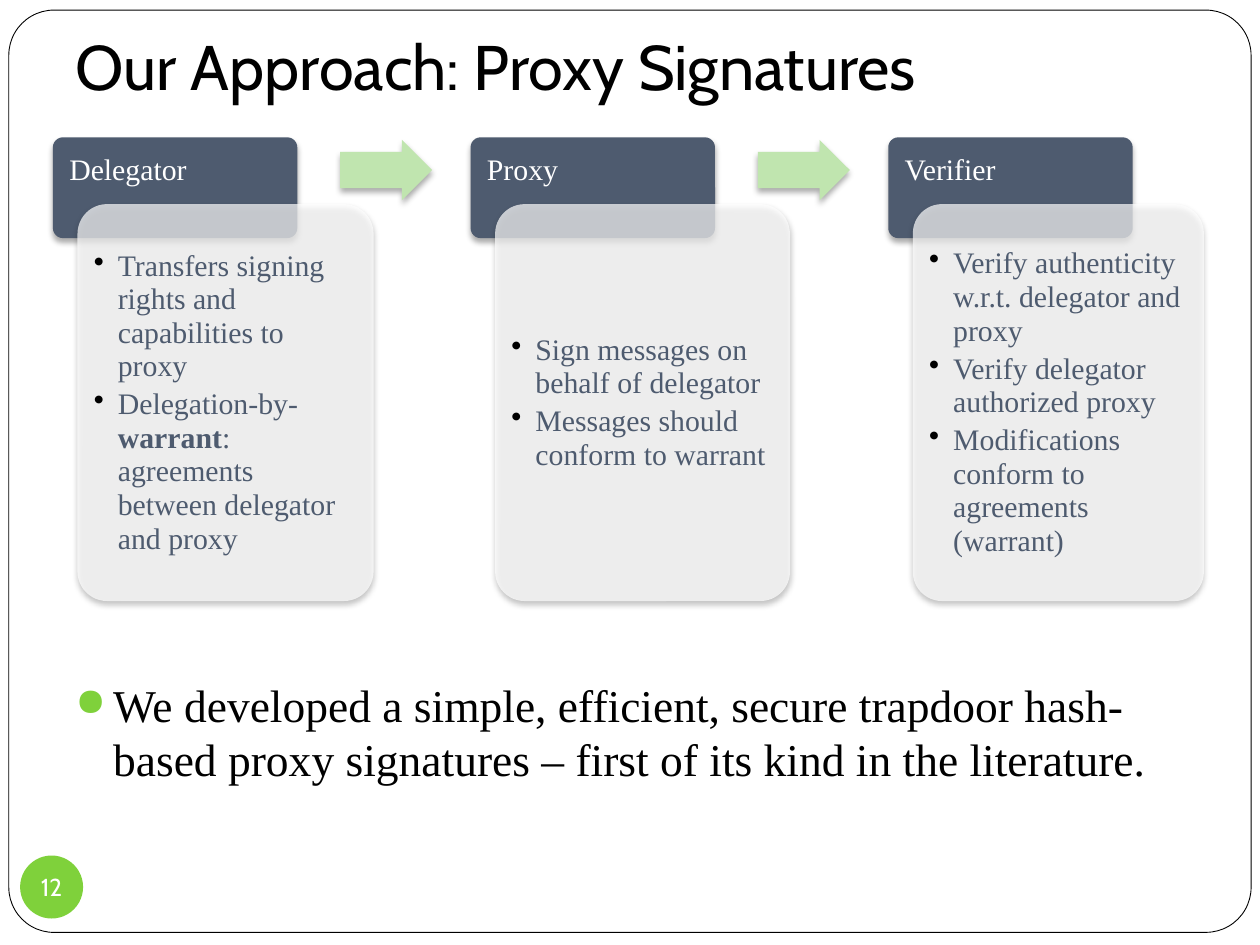
from lxml import etree
from pptx import Presentation
from pptx.dml.color import RGBColor
from pptx.enum.shapes import MSO_SHAPE as Shape
from pptx.enum.text import MSO_ANCHOR as Anchor, PP_ALIGN as Align
from pptx.oxml.ns import qn
from pptx.util import Inches, Pt

WHITE = RGBColor(0xFF, 0xFF, 0xFF)
BLACK = RGBColor(0, 0, 0)
SLATE = RGBColor(0x4E, 0x5B, 0x6F)
PALE_GREEN = RGBColor(0xC0, 0xE5, 0xAF)
GREEN = RGBColor(0x7F, 0xD1, 0x3B)
HEADING_FONT = "Cabin"
BODY_FONT = "Times New Roman"

FIRST_LEFT, COLUMN_STEP = 0.42, 3.315
ROLES = [
    ("Delegator", 2.35, [
        ["Transfers signing rights and capabilities to proxy"],
        ["Delegation-by-", ("warrant", True), ": agreements between delegator and proxy"],
    ]),
    ("Proxy", 2.34, [
        ["Sign messages on behalf of delegator"],
        ["Messages should conform to warrant"],
    ]),
    ("Verifier", 2.31, [
        ["Verify authenticity w.r.t. delegator and proxy"],
        ["Verify delegator authorized proxy"],
        ["Modifications conform to agreements (warrant)"],
    ]),
]


def add_xml(parent, tag, **attributes):
    return etree.SubElement(parent, qn(tag), {k: str(v) for k, v in attributes.items()})


def add_shadow(shape):
    effects = shape._element.spPr.find(qn("a:effectLst"))
    shadow = add_xml(effects, "a:outerShdw", blurRad=Pt(3.5), dist=Pt(2.2),
                     dir=5400000, rotWithShape=0)
    add_xml(add_xml(shadow, "a:srgbClr", val=BLACK), "a:alpha", val=32000)


def add_block(slide, kind, box, fill, adjust=(), outline=None, alpha=None, shadow=False):
    """Add a filled preset shape; alpha is its opacity in percent."""
    shape = slide.shapes.add_shape(kind, *map(Inches, box))
    for index, value in enumerate(adjust):
        shape.adjustments[index] = value
    shape.fill.solid()
    shape.fill.fore_color.rgb = fill
    if alpha is not None:
        color = shape._element.spPr.find(qn("a:solidFill")).find(qn("a:srgbClr"))
        add_xml(color, "a:alpha", val=alpha * 1000)
    if outline is None:
        shape.line.fill.background()
    else:
        shape.line.color.rgb = outline
        shape.line.width = Pt(0.5)
    shape.shadow.inherit = False
    if shadow:
        add_shadow(shape)
    return shape


def set_bullet(paragraph, char, color, indent, percent):
    properties = paragraph._p.get_or_add_pPr()
    properties.set("marL", str(Inches(indent)))
    properties.set("indent", str(-Inches(indent)))
    add_xml(add_xml(properties, "a:buClr"), "a:srgbClr", val=color)
    add_xml(properties, "a:buSzPct", val=percent * 1000)
    add_xml(properties, "a:buChar", char=char)


def write_text(shape, paragraphs, *, size, font=BODY_FONT, color=BLACK, insets=(0.1, 0.05, 0.1, 0.05),
               anchor=Anchor.TOP, align=Align.LEFT, wrap=True, line_spacing=None,
               space_after=0, bullet=None):
    """Fill a shape with paragraphs, each a list of strings or (string, bold) runs."""
    frame = shape.text_frame
    frame.word_wrap = wrap
    frame.vertical_anchor = anchor
    (frame.margin_left, frame.margin_top,
     frame.margin_right, frame.margin_bottom) = map(Inches, insets)
    for index, runs in enumerate(paragraphs):
        paragraph = frame.add_paragraph() if index else frame.paragraphs[0]
        paragraph.alignment = align
        paragraph.space_after = Pt(space_after)
        if line_spacing:
            paragraph.line_spacing = line_spacing
        if bullet:
            set_bullet(paragraph, *bullet)
        for part in runs:
            text, bold = (part, False) if isinstance(part, str) else part
            run = paragraph.add_run()
            run.text = text
            run.font.size = Pt(size)
            run.font.name = font
            run.font.bold = bold
            run.font.color.rgb = color


def add_text(slide, box, paragraphs, **text_format):
    write_text(slide.shapes.add_textbox(*map(Inches, box)), paragraphs, **text_format)


def add_role(slide, left, role, card_width, duties):
    add_block(slide, Shape.ROUNDED_RECTANGLE, (left, 1.09, 1.94, 0.8), SLATE,
              adjust=[0.1], shadow=True)
    add_text(slide, (left, 1.09, 1.94, 0.54), [[role]], size=17, color=WHITE,
             insets=(0.13, 0.13, 0.13, 0.07), line_spacing=0.94)
    card = (left + 0.195, 1.62, card_width, 3.15)
    add_block(slide, Shape.ROUNDED_RECTANGLE, card, WHITE,
              adjust=[0.1], alpha=70, shadow=True)
    add_text(slide, card, duties, size=17, color=SLATE, insets=(0.13,) * 4,
             anchor=Anchor.MIDDLE, line_spacing=0.94, space_after=2.5,
             bullet=("•", BLACK, 0.19, 100))


def main():
    deck = Presentation()
    deck.slide_width, deck.slide_height = Inches(10), Inches(7.5)
    slide = deck.slides.add_slide(deck.slide_layouts[6])

    add_block(slide, Shape.ROUNDED_RECTANGLE, (0.07, 0.08, 9.86, 7.32), WHITE,
              adjust=[0.049], outline=BLACK)
    add_text(slide, (0.5, -0.33, 9, 1.25), [["Our Approach: Proxy Signatures"]], size=36,
             font=HEADING_FONT, insets=(0.1, 0.05, 0.1, 0.1), anchor=Anchor.BOTTOM)
    add_text(slide, (0.5, 4.76, 9, 2.22),
             [["We developed a simple, efficient, secure trapdoor hash-based proxy "
               "signatures – first of its kind in the literature."]],
             size=26, insets=(0.1, 0.61, 0.1, 0.05), bullet=("●", GREEN, 0.3, 85))

    for column, (role, card_width, duties) in enumerate(ROLES):
        left = FIRST_LEFT + column * COLUMN_STEP
        if column:
            add_block(slide, Shape.RIGHT_ARROW, (left - 1.035, 1.11, 0.73, 0.48), PALE_GREEN,
                      adjust=[0.6, 0.5], shadow=True)
        add_role(slide, left, role, card_width, duties)

    page_number = add_block(slide, Shape.OVAL, (0.16, 6.79, 0.5, 0.5), GREEN)
    write_text(page_number, [["12"]], size=14, font=HEADING_FONT, color=WHITE,
               insets=(0,) * 4, anchor=Anchor.MIDDLE, align=Align.CENTER, wrap=False)
    deck.save("out.pptx")


if __name__ == "__main__":
    main()
